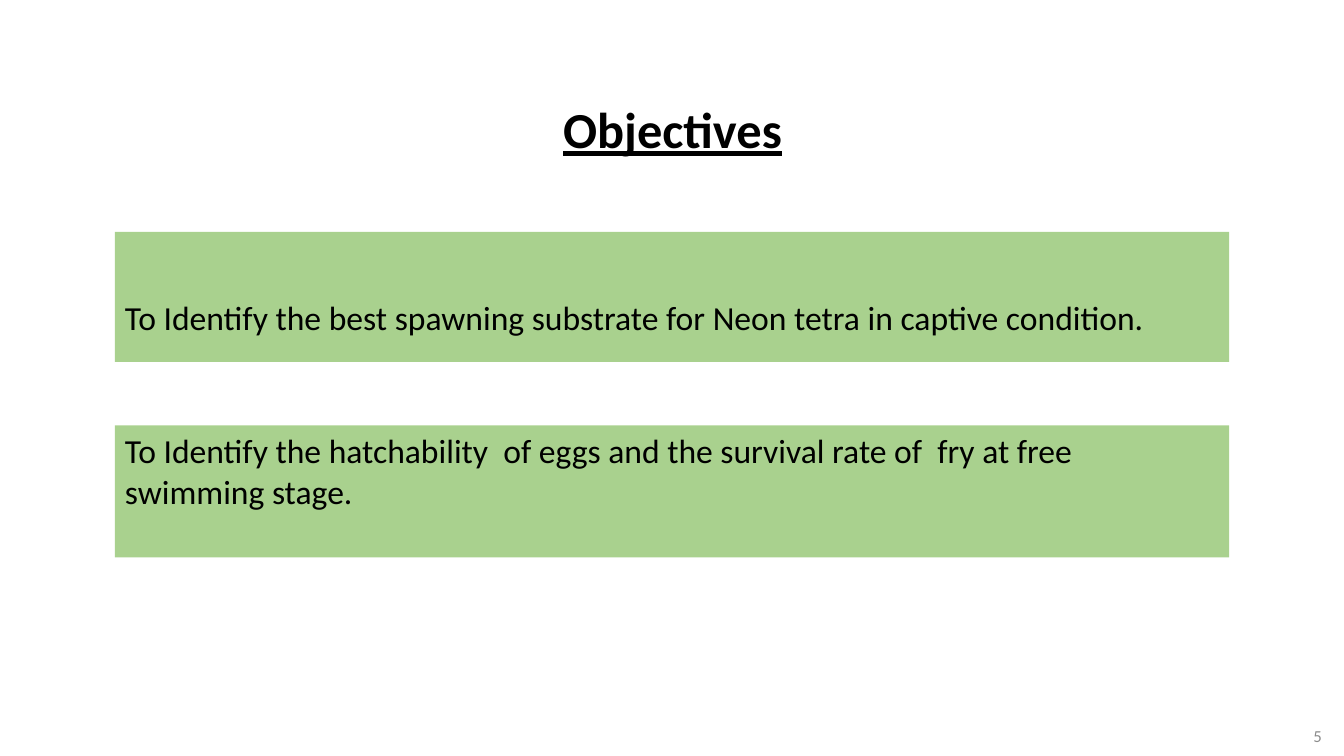
from dataclasses import dataclass

import pptx
import pptx.dml.color
import pptx.enum.shapes
import pptx.enum.text
import pptx.util
from pptx.dml.color import RGBColor
from pptx.enum.text import MSO_ANCHOR, PP_ALIGN
from pptx.util import Inches

BLACK = RGBColor(0x00, 0x00, 0x00)
GREEN = RGBColor(0xA9, 0xD1, 0x8E)
GREY = RGBColor(0x8C, 0x8C, 0x8C)


@dataclass(frozen=True)
class Objective:
    wording: str
    top: float
    height: float
    line_spacing: float = 1.0


OBJECTIVES = [
    Objective(
        "To Identify the best spawning substrate for Neon tetra in captive condition.",
        2.3, 1.29, line_spacing=2.5,
    ),
    Objective(
        "To Identify the hatchability  of eggs and the survival rate of  fry "
        "at free swimming stage.",
        4.22, 1.31,
    ),
]


def write(
    frame: pptx.text.text.TextFrame,
    wording: str,
    size: float,
    color: RGBColor,
    align: PP_ALIGN,
    anchor: MSO_ANCHOR,
    line_spacing: float = 1.0,
) -> pptx.text.text.Font:
    """Fill the frame with one formatted run and return the run's font."""
    frame.word_wrap = True
    frame.auto_size = pptx.enum.text.MSO_AUTO_SIZE.NONE
    frame.vertical_anchor = anchor
    paragraph = frame.paragraphs[0]
    paragraph.alignment = align
    paragraph.line_spacing = line_spacing
    run = paragraph.add_run()
    run.text = wording
    run.font.name = "Calibri"
    run.font.size = pptx.util.Pt(size)
    run.font.color.rgb = color
    return run.font


def add_heading(slide: pptx.slide.Slide) -> None:
    heading = slide.shapes.title
    heading.left, heading.top = Inches(0.92), Inches(0.4)
    heading.width, heading.height = Inches(11.5), Inches(1.45)
    font = write(heading.text_frame, "Objectives", 36, BLACK,
                 PP_ALIGN.CENTER, MSO_ANCHOR.MIDDLE, line_spacing=1.5)
    font.bold = True
    font.underline = True
    heading.text_frame.paragraphs[0].space_after = pptx.util.Pt(8)


def add_objective(slide: pptx.slide.Slide, objective: Objective) -> None:
    panel = slide.shapes.add_shape(
        pptx.enum.shapes.MSO_SHAPE.RECTANGLE,
        Inches(1.14), Inches(objective.top), Inches(11.05), Inches(objective.height),
    )
    panel.shadow.inherit = False
    panel.fill.solid()
    panel.fill.fore_color.rgb = GREEN
    panel.line.fill.background()
    write(panel.text_frame, objective.wording, 24, BLACK,
          PP_ALIGN.LEFT, MSO_ANCHOR.TOP, objective.line_spacing)


def add_page_number(slide: pptx.slide.Slide) -> None:
    page_number = slide.shapes.add_textbox(
        Inches(10.21), Inches(7.1), Inches(3), Inches(0.4))
    write(page_number.text_frame, "5", 12, GREY, PP_ALIGN.RIGHT, MSO_ANCHOR.MIDDLE)


def main() -> None:
    presentation = pptx.Presentation()
    presentation.slide_width = Inches(13.33)
    presentation.slide_height = Inches(7.5)
    slide = presentation.slides.add_slide(presentation.slide_layouts[5])
    add_heading(slide)
    add_page_number(slide)
    for objective in OBJECTIVES:
        add_objective(slide, objective)
    presentation.save("out.pptx")


if __name__ == "__main__":
    main()
